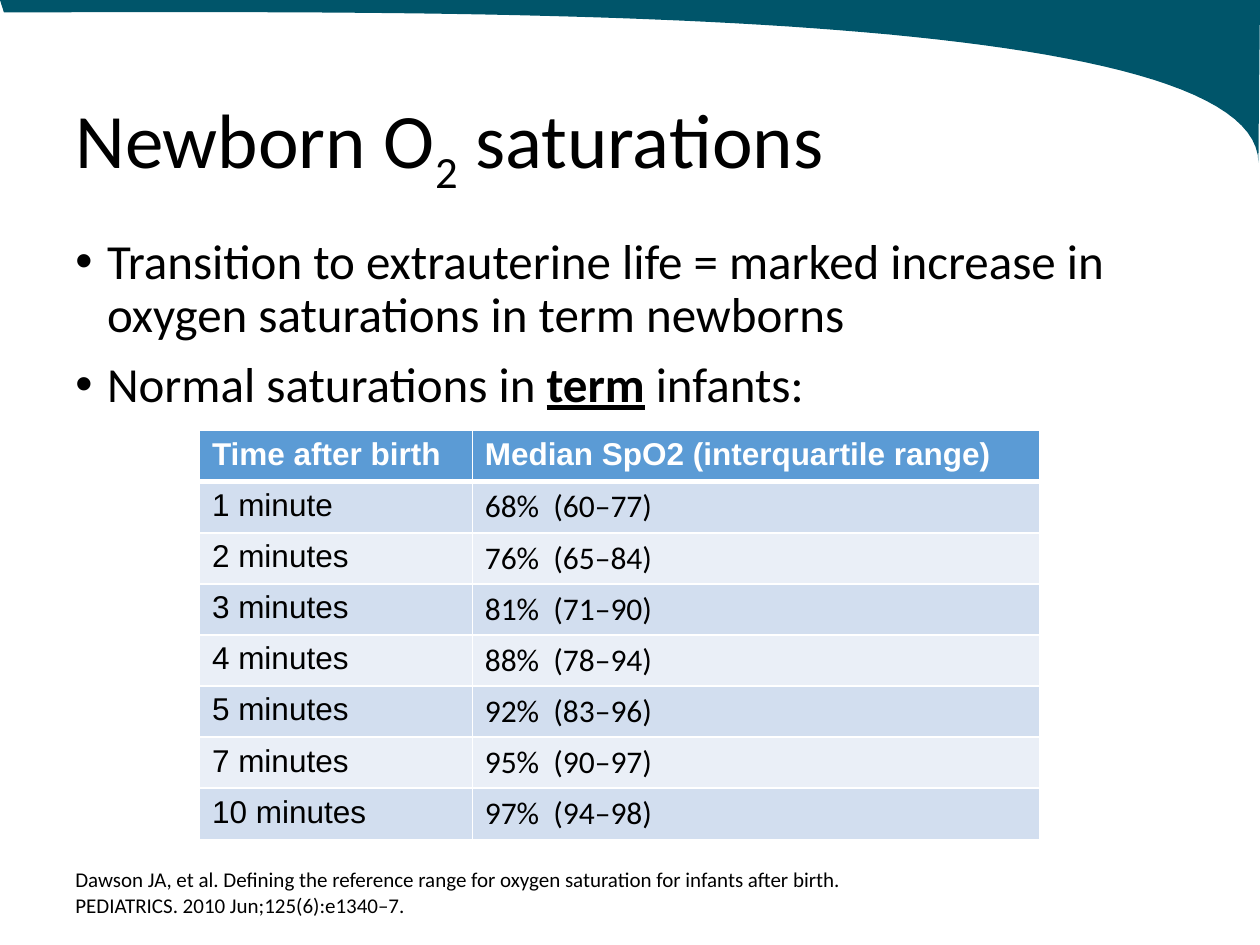
from lxml import etree
from pptx import Presentation
from pptx.dml.color import RGBColor
from pptx.enum.text import MSO_ANCHOR
from pptx.oxml.ns import qn
from pptx.util import Cm, Pt

MIDDLE, TOP = MSO_ANCHOR.MIDDLE, MSO_ANCHOR.TOP
COLORS = {"banner": "00556A", "text": "000000", "white": "FFFFFF",
          "header": "5B9BD5", "odd": "D2DEEF", "even": "EAEFF7"}

TITLE = [[("Newborn O", {}), ("2", {"baseline": "-25000"}), (" saturations", {})]]
BULLETS = [
    [("Transition to extrauterine life = marked increase in "
      "oxygen saturations in term newborns", {})],
    [("Normal saturations in ", {}), ("term", {"bold": True, "underline": True}),
     (" infants:", {})],
]
CITATION = [
    [("Dawson JA, et al. Defining the reference range for oxygen saturation "
      "for infants after birth.", {})],
    [("PEDIATRICS. 2010 Jun;125(6):e1340–7.", {})],
]
SATURATIONS = [
    ("Time after birth", "Median SpO2 (interquartile range)"),
    ("1 minute", "68%  (60–77)"),
    ("2 minutes", "76%  (65–84)"),
    ("3 minutes", "81%  (71–90)"),
    ("4 minutes", "88%  (78–94)"),
    ("5 minutes", "92%  (83–96)"),
    ("7 minutes", "95%  (90–97)"),
    ("10 minutes", "97%  (94–98)"),
]
COLUMN_WIDTHS = [5.5, 11.43]
ROW_HEIGHT = 1.03
BANNER_CURVES = [
    [(25.4, 0), (25.4, 0.36), (25.37, 2.92), (25.37, 3.28)],
    [(25.37, 3.28), (25.35, 0), (8.53, 0.25), (0.08, 0.25)],
]
CURVE_STEPS = 60


def color(name):
    return RGBColor.from_string(COLORS[name])


def curve_points(controls):
    for step in range(1, CURVE_STEPS + 1):
        t = step / CURVE_STEPS
        weights = [(1 - t) ** 3, 3 * t * (1 - t) ** 2, 3 * t ** 2 * (1 - t), t ** 3]
        yield tuple(Cm(sum(w * point[axis] for w, point in zip(weights, controls)))
                    for axis in (0, 1))


def add_banner(page):
    builder = page.shapes.build_freeform(0, 0)
    points = [(Cm(25.4), 0)]
    for controls in BANNER_CURVES:
        points.extend(curve_points(controls))
    builder.add_line_segments(points, close=True)
    banner = builder.convert_to_shape()
    banner.shadow.inherit = False
    banner.fill.solid()
    banner.fill.fore_color.rgb = color("banner")
    banner.line.fill.background()


def add_span(para, text, size, font="Calibri", ink="text", baseline=None, **formats):
    span = para.add_run()
    span.text = text
    span.font.color.rgb = color(ink)
    for name, value in {"name": font, "size": Pt(size), **formats}.items():
        setattr(span.font, name, value)
    if baseline:
        span.font._element.set("baseline", baseline)


def add_bullet(para):
    properties = para._p.get_or_add_pPr()
    properties.set("marL", str(Cm(0.64)))
    properties.set("indent", str(-Cm(0.64)))
    etree.SubElement(properties, qn("a:buFont")).set("typeface", "Arial")
    etree.SubElement(properties, qn("a:buChar")).set("char", "•")


def add_text(page, place, paragraphs, size, anchor=TOP, spacing=None, gap=0, bullets=False):
    box = page.shapes.add_textbox(*map(Cm, place))
    frame = box.text_frame
    frame.word_wrap = True
    frame.vertical_anchor = anchor
    for index, spans in enumerate(paragraphs):
        para = frame.add_paragraph() if index else frame.paragraphs[0]
        if bullets:
            add_bullet(para)
        para.line_spacing = spacing
        if index and gap:
            para.space_before = Pt(gap)
        for text, formats in spans:
            add_span(para, text, size, **formats)


def add_border(cell, side, width):
    line = etree.SubElement(cell._tc.get_or_add_tcPr(), qn("a:" + side))
    line.set("w", str(Pt(width)))
    fill = etree.SubElement(line, qn("a:solidFill"))
    etree.SubElement(fill, qn("a:srgbClr")).set("val", COLORS["white"])


def add_saturation_table(page):
    rows, columns = len(SATURATIONS), len(COLUMN_WIDTHS)
    table = page.shapes.add_table(
        rows, columns, Cm(4.02), Cm(8.68),
        Cm(sum(COLUMN_WIDTHS)), Cm(ROW_HEIGHT * rows)).table
    for column, width in zip(table.columns, COLUMN_WIDTHS):
        column.width = Cm(width)
    for row_index, values in enumerate(SATURATIONS):
        table.rows[row_index].height = Cm(ROW_HEIGHT)
        header = row_index == 0
        shade = "header" if header else "odd" if row_index % 2 else "even"
        for column_index, value in enumerate(values):
            cell = table.cell(row_index, column_index)
            borders = {"lnL": 1, "lnR": 1, "lnT": 3 if row_index == 1 else 1,
                       "lnB": 3 if header else 1}
            for side, width in borders.items():
                add_border(cell, side, width)
            cell.fill.solid()
            cell.fill.fore_color.rgb = color(shade)
            font = "Arial" if header or column_index == 0 else "Calibri"
            add_span(cell.text_frame.paragraphs[0], value, 18, font,
                     "white" if header else "text", bold=header)


def main():
    deck = Presentation()
    deck.slide_width, deck.slide_height = Cm(25.4), Cm(19.05)
    page = deck.slides.add_slide(deck.slide_layouts[6])
    add_banner(page)
    add_text(page, (1.27, 1.24, 22.86, 3.18), TITLE, 44, anchor=MIDDLE, spacing=0.9)
    add_text(page, (1.27, 4.65, 22.86, 12.19), BULLETS, 28,
             spacing=0.9, gap=10, bullets=True)
    add_text(page, (1.27, 17.35, 23.29, 1.27), CITATION, 12)
    add_saturation_table(page)
    deck.save("out.pptx")


if __name__ == "__main__":
    main()
